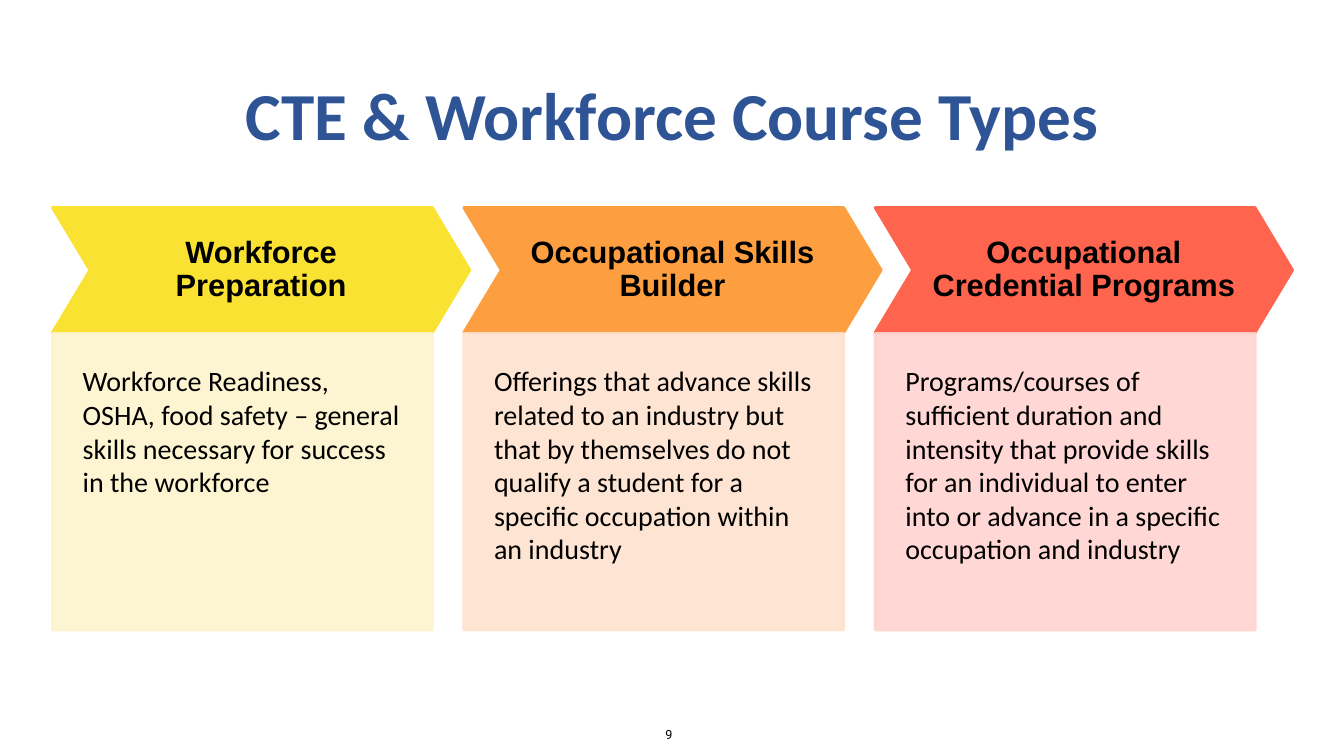
from dataclasses import dataclass

from lxml import etree
from pptx import Presentation
from pptx import util as u
from pptx.dml.color import RGBColor
from pptx.enum import shapes, text
from pptx.oxml import ns


@dataclass(frozen=True)
class Theme:
    title: str = "2F5496"
    ink: str = "000000"
    title_size: int = 48
    heading_size: int = 22
    body_size: int = 20
    number_size: int = 9
    body_font: str = "Calibri"
    heading_font: str = "Arial"
    number_font: str = "Roboto"


THEME = Theme()

# heading, chevron colour, panel colour, description
COURSE_TYPES = [
    ("Workforce Preparation", "FAE232", "FDF4CE",
     "Workforce Readiness, OSHA, food safety – general skills necessary for "
     "success in the workforce"),
    ("Occupational Skills Builder", "FD9F40", "FEE3CF",
     "Offerings that advance skills related to an industry but that by "
     "themselves do not qualify a student for a specific occupation within "
     "an industry"),
    ("Occupational Credential Programs", "FF644E", "FFD3D0",
     "Programs/courses of sufficient duration and intensity that provide "
     "skills for an individual to enter into or advance in a specific "
     "occupation and industry"),
]


def set_values(target, values):
    for name, value in values.items():
        setattr(target, name, value)


def write(shape, words, font, color, size, insets, bold=False,
          align=text.PP_ALIGN.LEFT, anchor=text.MSO_ANCHOR.TOP, spacing=1.0):
    """Put one formatted paragraph into a shape; insets run left, top, right, bottom."""
    frame = shape.text_frame
    sides = ("margin_left", "margin_top", "margin_right", "margin_bottom")
    set_values(frame, {side: u.Inches(inset) for side, inset in zip(sides, insets)})
    set_values(frame, {"word_wrap": True, "vertical_anchor": anchor})
    paragraph = frame.paragraphs[0]
    paragraph.text = words
    set_values(paragraph, {"alignment": align, "line_spacing": spacing})
    set_values(paragraph.font, {"name": font, "size": u.Pt(size), "bold": bold})
    paragraph.font.color.rgb = RGBColor.from_string(color)


def add_block(slide, kind, box, color, opacity=100):
    """Add a preset shape with fill and outline of one colour."""
    shape = slide.shapes.add_shape(kind, *map(u.Inches, box))
    shape.shadow.inherit = False
    shape.fill.solid()
    shape.line.fill.solid()
    shape.line.width = u.Pt(2)
    for fill in (shape.fill, shape.line.fill):
        fill.fore_color.rgb = RGBColor.from_string(color)
    if opacity < 100:
        for solid_color in shape.element.spPr.iter(ns.qn("a:srgbClr")):
            etree.SubElement(solid_color, ns.qn("a:alpha"), val=str(opacity * 1000))
    return shape


def add_title(slide, box, words):
    title = slide.shapes.title
    sides = ("left", "top", "width", "height")
    set_values(title, dict(zip(sides, map(u.Inches, box))))
    write(title, words, THEME.body_font, THEME.title, THEME.title_size,
          [0.06] * 4, bold=True, align=text.PP_ALIGN.CENTER,
          anchor=text.MSO_ANCHOR.MIDDLE)


def add_course_type(slide, box, heading, strong, pale, description):
    """Chevron heading above a pale panel; the chevron's point passes the panel."""
    left, top, width, height = box
    heading_height, point, panel_offset = 1.24, 0.37, 1.25

    chevron = add_block(slide, shapes.MSO_SHAPE.CHEVRON,
                        (left, top, width + point, heading_height), strong)
    chevron.adjustments[0] = 0.3
    write(chevron, heading, THEME.heading_font, THEME.ink, THEME.heading_size,
          [0.15] * 4, bold=True, align=text.PP_ALIGN.CENTER,
          anchor=text.MSO_ANCHOR.MIDDLE, spacing=0.9)

    panel = add_block(slide, shapes.MSO_SHAPE.RECTANGLE,
                      (left, top + panel_offset, width, height - panel_offset),
                      pale, opacity=90)
    write(panel, description, THEME.body_font, THEME.ink, THEME.body_size,
          (0.3, 0.3, 0.3, 0.6))


def add_page_number(slide, box, number):
    label = slide.shapes.add_textbox(*map(u.Inches, box))
    write(label, number, THEME.number_font, THEME.ink, THEME.number_size, [0.06] * 4)
    label.text_frame.auto_size = text.MSO_AUTO_SIZE.SHAPE_TO_FIT_TEXT


def main():
    presentation = Presentation()
    presentation.slide_width = u.Inches(13.33)
    presentation.slide_height = u.Inches(7.5)
    slide = presentation.slides.add_slide(presentation.slide_layouts[5])

    add_title(slide, (0.92, 0.4, 11.5, 1.45), "CTE & Workforce Course Types")

    # Three equal columns
    first_left, column_pitch = 0.52, 4.08
    for index, course_type in enumerate(COURSE_TYPES):
        box = (first_left + index * column_pitch, 2.06, 3.77, 4.19)
        add_course_type(slide, box, *course_type)

    add_page_number(slide, (6.54, 7.15, 0.27, 0.26), "9")
    presentation.save("out.pptx")


if __name__ == "__main__":
    main()
